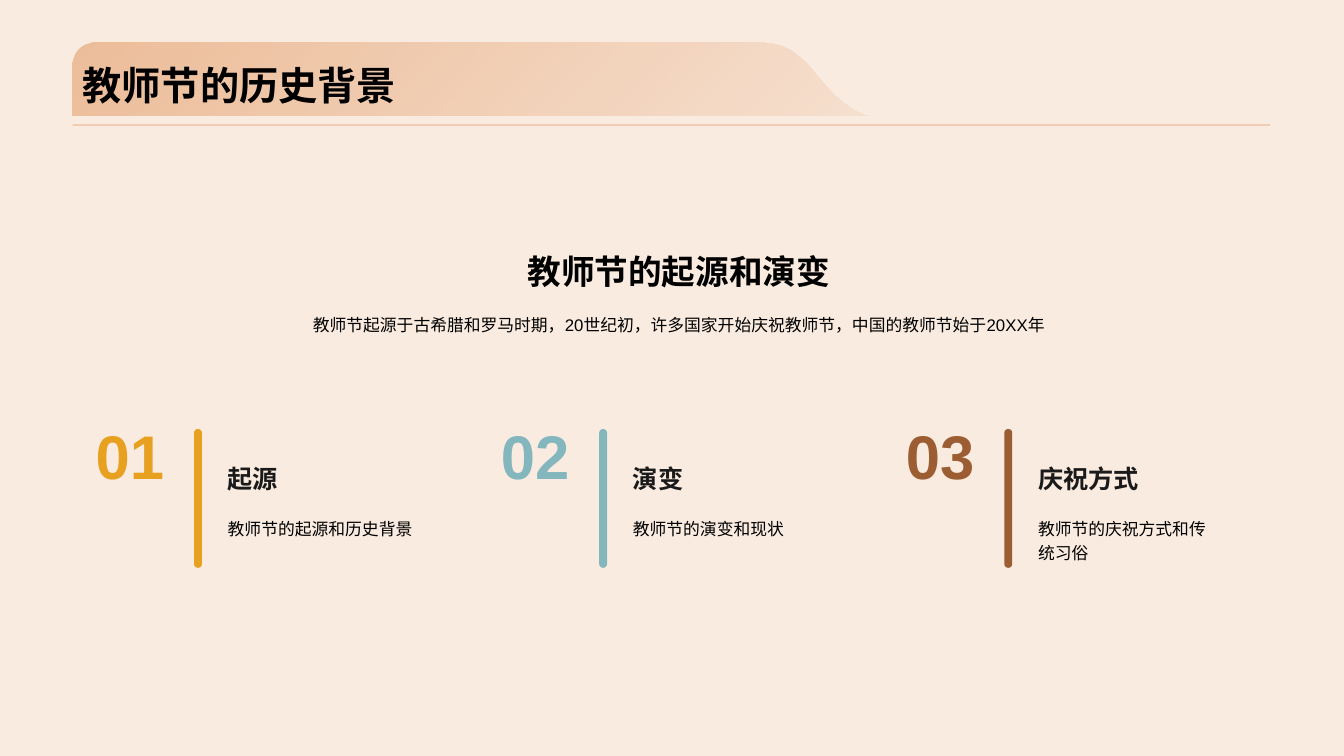
from lxml.etree import SubElement
from pptx import Presentation
from pptx.dml.color import RGBColor
from pptx.enum.shapes import MSO_CONNECTOR, MSO_SHAPE
from pptx.enum.text import MSO_ANCHOR, MSO_AUTO_SIZE, PP_ALIGN
from pptx.oxml.ns import qn
from pptx.util import Cm, Pt

CREAM = RGBColor(0xF9, 0xEB, 0xE0)
ORANGE = RGBColor(0xDA, 0x77, 0x2E)
AMBER = RGBColor(0xE7, 0xA0, 0x20)
TEAL = RGBColor(0x83, 0xB6, 0xBD)
BROWN = RGBColor(0x9B, 0x5D, 0x31)
BLACK = RGBColor(0, 0, 0)
CHARCOAL = RGBColor(0x1A, 0x1A, 0x1A)

TITLE = {"size": Pt(28), "bold": True}
HEADING = {"size": Pt(24), "bold": True}
NUMBER = {"size": Pt(44), "bold": True}
TOPIC = {"size": Pt(18), "bold": True}
BODY = {"size": Pt(12), "bold": False}

BAND_START = (18.62, 0.64)
BAND_CURVES = [
    [(18.14, 0.1), (17.75, 0), (17.37, 0)],
    [(0.56, 0), (0.56, 0), (0.56, 0)],
    [(0.25, 0), (0, 0.25), (0, 0.58)],
    [(0, 1.83), (0, 1.83), (0, 1.83)],
    [(20.09, 1.83), (20.09, 1.83), (20.09, 1.83)],
    [(19.46, 1.65), (19.08, 1.19), BAND_START],
]

TOPICS = [
    ("01", "起源", "教师节的起源和历史背景", AMBER, 5.92),
    ("02", "演变", "教师节的演变和现状", TEAL, 5.92),
    ("03", "庆祝方式", "教师节的庆祝方式和传统习俗", BROWN, 5.11),
]
TOPIC_PITCH = 10.21


def set_all(target, values):
    for name, value in values.items():
        setattr(target, name, value)


def place(shape, left, top, width, height):
    set_all(shape, {"left": Cm(left), "top": Cm(top), "width": Cm(width), "height": Cm(height)})


def write(shape, text, style, color=BLACK, align=PP_ALIGN.LEFT, anchor=MSO_ANCHOR.TOP, spacing=1.0):
    frame = shape.text_frame
    set_all(frame, {"word_wrap": True, "auto_size": MSO_AUTO_SIZE.NONE, "vertical_anchor": anchor})
    para = frame.paragraphs[0]
    set_all(para, {"alignment": align, "line_spacing": spacing})
    span = para.add_run()
    span.text = text
    set_all(span.font, {"name": "Arial", **style})
    span.font.color.rgb = color


def add_text(page, box, text, style, **layout):
    shape = page.shapes.add_textbox(*map(Cm, box))
    write(shape, text, style, **layout)


def set_opacity(shape, percents):
    for color, percent in zip(shape._element.spPr.iter(qn("a:srgbClr")), percents):
        SubElement(color, qn("a:alpha"), val=str(percent * 1000))


def curve_points(start, curves, steps=16):
    points = []
    for first, second, end in curves:
        for step in range(1, steps + 1):
            t = step / steps
            weights = ((1 - t) ** 3, 3 * t * (1 - t) ** 2, 3 * t ** 2 * (1 - t), t ** 3)
            corners = (start, first, second, end)
            points.append(tuple(
                Cm(sum(w * corner[axis] for w, corner in zip(weights, corners)))
                for axis in (0, 1)))
        start = end
    return points


def add_header(page, left, top, width):
    builder = page.shapes.build_freeform(*map(Cm, BAND_START))
    builder.add_line_segments(curve_points(BAND_START, BAND_CURVES), close=True)
    band = builder.convert_to_shape(Cm(left), Cm(top))
    band.shadow.inherit = False
    band.line.fill.background()
    band.fill.gradient()
    band.fill.gradient_angle = 315
    for stop in band.fill.gradient_stops:
        stop.color.rgb = ORANGE
    set_opacity(band, (40, 10))

    rule_top = Cm(top + 2.08)
    rule = page.shapes.add_connector(
        MSO_CONNECTOR.STRAIGHT, Cm(left), rule_top, Cm(left + width), rule_top)
    rule.line.color.rgb = ORANGE
    rule.line.width = Pt(1)
    set_opacity(rule, (40,))
    SubElement(rule._element.spPr, qn("a:effectLst"))

    title = page.shapes.title
    place(title, left, 0, width, top + 1.78)
    write(title, "教师节的历史背景", TITLE, anchor=MSO_ANCHOR.BOTTOM)
    page.shapes._spTree.append(title._element)


def add_intro(page, left, top, width):
    add_text(page, (left, top, width, 1.27), "教师节的起源和演变", HEADING,
             align=PP_ALIGN.CENTER, anchor=MSO_ANCHOR.MIDDLE)
    add_text(page, (left, top + 1.5, width, 0.81),
             "教师节起源于古希腊和罗马时期，20世纪初，许多国家开始庆祝教师节，中国的教师节始于20XX年",
             BODY, align=PP_ALIGN.CENTER, spacing=1.2)


def add_topic(page, left, top, number, name, detail, color, text_width):
    add_text(page, (left, top, 2.69, 2.13), number, NUMBER, color=color,
             align=PP_ALIGN.CENTER, anchor=MSO_ANCHOR.MIDDLE)
    bar = page.shapes.add_shape(
        MSO_SHAPE.ROUNDED_RECTANGLE, *map(Cm, (left + 2.96, top + 0.4, 0.2, 3.5)))
    bar.adjustments[0] = 0.5
    bar.shadow.inherit = False
    bar.fill.solid()
    bar.fill.fore_color.rgb = color
    bar.line.fill.background()
    text_left = left + 3.56
    add_text(page, (text_left, top + 1.12, text_width, 1.02), name, TOPIC,
             color=CHARCOAL, anchor=MSO_ANCHOR.BOTTOM)
    add_text(page, (text_left, top + 2.44, text_width, 1.42), detail, BODY, spacing=1.2)


def main():
    deck = Presentation()
    set_all(deck, {"slide_width": Cm(33.87), "slide_height": Cm(19.05)})
    page = deck.slides.add_slide(deck.slide_layouts[5])
    page.background.fill.solid()
    page.background.fill.fore_color.rgb = CREAM
    add_header(page, 1.83, 1.07, 30.18)
    add_intro(page, 4.62, 6.2, 24.97)
    for index, topic in enumerate(TOPICS):
        add_topic(page, 1.93 + index * TOPIC_PITCH, 10.41, *topic)
    deck.save("out.pptx")


if __name__ == "__main__":
    main()
